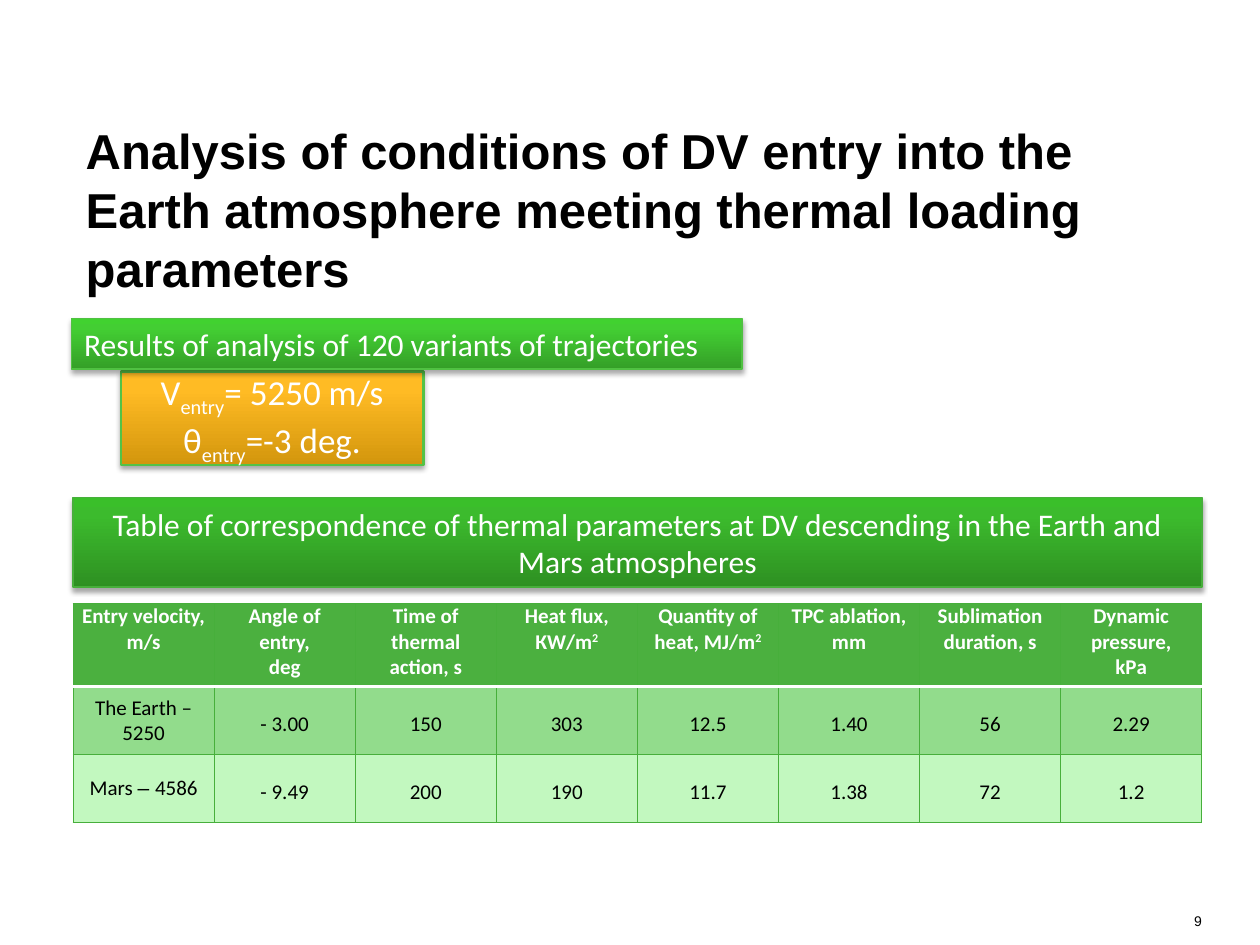
from lxml.etree import SubElement
from pptx import Presentation
from pptx.dml.color import RGBColor
from pptx.enum.shapes import MSO_SHAPE
from pptx.enum.text import MSO_ANCHOR, MSO_AUTO_SIZE, PP_ALIGN
from pptx.oxml import parse_xml
from pptx.oxml.ns import nsdecls, qn
from pptx.util import Inches, Pt

HEADER_GREEN, BORDER_GREEN = "4BB03F", "47AF3B"
ROW_FILLS = [HEADER_GREEN, "92DC8C", "C2F8BF"]
ROW_HEIGHTS = [0.66, 0.54, 0.54]
COLUMN_WIDTH = 1.12
BLANK_LINE = 0.2

# A paragraph is a list of runs; a run is its text and the format that differs.
SUBSCRIPT = {"baseline": -25}
SUPERSCRIPT = {"baseline": 30}
HEADERS = [
    [[("Entry velocity,", {})], [("m/s", {})]],
    [[("Angle of entry,", {})], [("deg", {})]],
    [[("Time of thermal action, s", {})]],
    [[("Heat flux, КW/m", {}), ("2", SUPERSCRIPT)]],
    [[("Quantity of heat, МJ/m", {}), ("2", SUPERSCRIPT)]],
    [[("TPC ablation, mm", {})]],
    [[("Sublimation duration, s", {})]],
    [[("Dynamic pressure,", {})], [("kPа", {})]],
]
ROW_LABELS = [
    [[("The Earth – 5250", {})]],
    [[("Mars ", {}), ("– ", {"name": "Arial"}), ("4586", {})]],
]
ROW_VALUES = [
    ["- 3.00", "150", "303", "12.5", "1.40", "56", "2.29"],
    ["- 9.49", "200", "190", "11.7", "1.38", "72", "1.2"],
]


def rgb(color):
    return RGBColor.from_string(color)


def plain(text):
    return [[(text, {})]]


def write_text(frame, paragraphs, color="FFFFFF", align=PP_ALIGN.CENTER, **font_format):
    for index, runs in enumerate(paragraphs):
        paragraph = frame.paragraphs[0] if index == 0 else frame.add_paragraph()
        paragraph.alignment = align
        for text, changes in runs:
            run = paragraph.add_run()
            run.text = text
            values = {"name": "Calibri", **font_format, **changes}
            baseline = values.pop("baseline", None)
            for name, value in values.items():
                setattr(run.font, name, value)
            run.font.color.rgb = rgb(color)
            if baseline:
                run.font._element.set("baseline", str(baseline * 1000))


def place(shape, left, top, width, height):
    box = {"left": left, "top": top, "width": width, "height": height}
    for name, value in box.items():
        setattr(shape, name, Inches(value))


def add_shadow(effects, blur, distance, opacity):
    """Put a black shadow that falls straight down into an effect list."""
    shadow = SubElement(effects, qn("a:outerShdw"), blurRad=str(Pt(blur)),
                        dist=str(Pt(distance)), dir="5400000", rotWithShape="0")
    color = SubElement(shadow, qn("a:srgbClr"), val="000000")
    SubElement(color, qn("a:alpha"), val=str(opacity * 1000))


def set_gradient(shape, colors):
    """Fill from bottom to top with stops at 0, 80 and 100 percent."""
    shape.fill.gradient()
    properties = shape._element.spPr
    stops = "".join(
        f'<a:gs pos="{position * 1000}"><a:srgbClr val="{color}"/></a:gs>'
        for position, color in zip((0, 80, 100), colors))
    gradient = parse_xml(
        f'<a:gradFill {nsdecls("a")} rotWithShape="1"><a:gsLst>{stops}</a:gsLst>'
        '<a:lin ang="16200000" scaled="0"/></a:gradFill>')
    properties.replace(properties.find(qn("a:gradFill")), gradient)


def add_banner(slide, box, colors, line, line_width, paragraphs, size, align=PP_ALIGN.CENTER):
    shape = slide.shapes.add_shape(MSO_SHAPE.RECTANGLE, *map(Inches, box))
    set_gradient(shape, colors)
    shape.line.color.rgb = rgb(line)
    shape.line.width = Pt(line_width)
    shape.shadow.inherit = False
    add_shadow(shape._element.spPr.find(qn("a:effectLst")), 3.1, 1.8, 35)
    shape.text_frame.word_wrap = True
    shape.text_frame.vertical_anchor = MSO_ANCHOR.MIDDLE
    write_text(shape.text_frame, paragraphs, align=align, size=Pt(size))


def add_title(slide, text):
    title = slide.shapes.title
    place(title, 0.58, 1.11, 9.11, 1.1)
    frame = title.text_frame
    frame.word_wrap = True
    frame.auto_size = MSO_AUTO_SIZE.NONE
    frame.vertical_anchor = MSO_ANCHOR.MIDDLE
    write_text(frame, plain(text), "000000", PP_ALIGN.LEFT,
               name="Arial", size=Pt(28), bold=True)
    font = frame.paragraphs[0].runs[0].font._element
    effects = parse_xml(f'<a:effectLst {nsdecls("a")}/>')
    font.find(qn("a:latin")).addprevious(effects)
    add_shadow(effects, 3, 3, 43)


def add_page_number(slide, text):
    box = slide.shapes.add_textbox(*map(Inches, (9, 7.24, 0.54, 0.19)))
    frame = box.text_frame
    for side in ("left", "top", "right", "bottom"):
        setattr(frame, f"margin_{side}", 0)
    write_text(frame, plain(text), "000000", PP_ALIGN.RIGHT, name="Arial", size=Pt(8))


def set_borders(cell, **edges):
    """Draw green cell edges, except those given as (colour, points)."""
    properties = cell._tc.get_or_add_tcPr()
    for index, edge in enumerate("LRTB"):
        color, width = edges.get(edge, (BORDER_GREEN, 0.75))
        properties.insert(index, parse_xml(
            f'<a:ln{edge} {nsdecls("a")} w="{Pt(width)}"><a:solidFill>'
            f'<a:srgbClr val="{color}"/></a:solidFill></a:ln{edge}>'))


def add_thermal_table(slide):
    rows = [HEADERS] + [[label, *map(plain, values)]
                        for label, values in zip(ROW_LABELS, ROW_VALUES)]
    frame = slide.shapes.add_table(
        len(rows), len(HEADERS), Inches(0.58), Inches(4.79),
        Inches(COLUMN_WIDTH * len(HEADERS)), Inches(sum(ROW_HEIGHTS)))
    table = frame.table
    for column in table.columns:
        column.width = Inches(COLUMN_WIDTH)
    rule = ("FFFFFF", 2)
    row_edges = [{"B": rule}, {"T": rule}, {}]
    for row, paragraphs_in_row in enumerate(rows):
        table.rows[row].height = Inches(ROW_HEIGHTS[row])
        for column, paragraphs in enumerate(paragraphs_in_row):
            cell = table.cell(row, column)
            is_header, is_label = row == 0, column == 0
            cell.margin_left = cell.margin_right = Inches(0.07)
            cell.margin_top = Inches(0 if is_header or is_label else BLANK_LINE)
            cell.margin_bottom = 0
            centred = is_label and not is_header
            cell.vertical_anchor = MSO_ANCHOR.MIDDLE if centred else MSO_ANCHOR.TOP
            cell.fill.solid()
            cell.fill.fore_color.rgb = rgb(ROW_FILLS[row])
            set_borders(cell, **row_edges[row])
            write_text(cell.text_frame, paragraphs, "FFFFFF" if is_header else "000000",
                       size=Pt(12), bold=is_header)


def main():
    presentation = Presentation()
    presentation.slide_width, presentation.slide_height = Inches(10), Inches(7.5)
    slide = presentation.slides.add_slide(presentation.slide_layouts[5])
    add_title(slide, "Analysis of conditions of DV entry into the Earth atmosphere "
                     "meeting thermal loading parameters")
    add_banner(slide, (0.96, 2.95, 2.4, 0.74), ("D3960D", "FFBB24", "FFBC25"), "54C247", 1.5,
               [[("V", {}), ("entry", SUBSCRIPT), ("= 5250 m/s", {})],
                [("θ", {}), ("entry", SUBSCRIPT), ("=-3 deg.", {})]], 20)
    add_banner(slide, (0.57, 2.53, 5.32, 0.4), ("349F27", "43CE33", "41D230"), "50C142", 0.75,
               plain("Results of analysis of 120 variants of trajectories"), 18, PP_ALIGN.LEFT)
    add_banner(slide, (0.58, 3.95, 8.96, 0.71), ("2E9022", "3CBB2D", "3ABF2A"), BORDER_GREEN, 0.75,
               plain("Table of correspondence of thermal parameters at DV descending "
                     "in the Earth and Mars atmospheres"), 18)
    add_thermal_table(slide)
    add_page_number(slide, "9")
    presentation.save("out.pptx")


if __name__ == "__main__":
    main()
